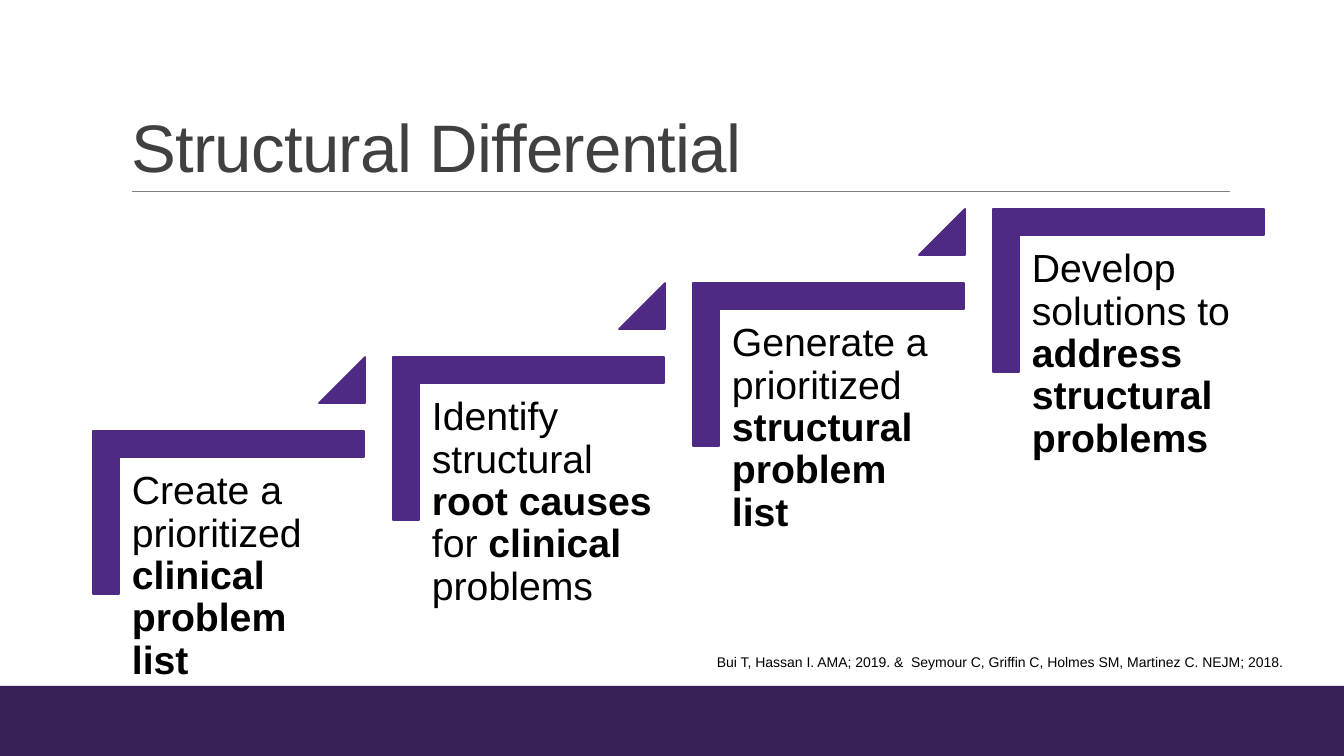
from lxml import etree
from pptx import Presentation
from pptx.dml.color import RGBColor
from pptx.enum.shapes import MSO_CONNECTOR, MSO_SHAPE
from pptx.enum.text import MSO_ANCHOR, MSO_AUTO_SIZE, PP_ALIGN
from pptx.oxml.ns import qn
from pptx.util import Pt

RECTANGLE = MSO_SHAPE.RECTANGLE
CORNER = MSO_SHAPE.CORNER
TRIANGLE = MSO_SHAPE.ISOSCELES_TRIANGLE
STRAIGHT = MSO_CONNECTOR.STRAIGHT
BOTTOM, TOP = MSO_ANCHOR.BOTTOM, MSO_ANCHOR.TOP
LEFT = PP_ALIGN.LEFT
NO_FIT = MSO_AUTO_SIZE.NONE

TITLE = "Structural Differential"
# Each step is a list of (words, bold)
STEPS = [
    [("Create a prioritized ", False), ("clinical problem list", True)],
    [("Identify structural ", False), ("root causes ", True), ("for ", False),
     ("clinical", True), (" problems", False)],
    [("Generate a prioritized ", False), ("structural problem list", True)],
    [("Develop solutions to ", False), ("address structural problems", True)],
]
CITATION = ("Bui T, Hassan I. AMA; 2019. &  Seymour C, Griffin C, "
            "Holmes SM, Martinez C. NEJM; 2018.")

PURPLE, DARK_PURPLE = "4E2A84", "372058"
BLACK, TITLE_GREY, RULE_GREY = "000000", "404040", "808080"
FONT = "Arial"

SLIDE_W, SLIDE_H = 1344, 756
EMU_PER_PX = 12192000 / SLIDE_W
STEP_RIGHT, STEP_UP = 300, 74
BRACKET_BOX = (147, 377, 163, 271)  # before the quarter turn
WORDS_BOX = (120, 459, 245, 215)
ARROW_BOX = (319, 357, 46, 46)
WORDS_INSET = 12


def px(length):
    return round(length * EMU_PER_PX)


def emu_box(box):
    return [px(length) for length in box]


def color(value):
    return RGBColor.from_string(value)


def set_attributes(target, values):
    for name, value in values.items():
        setattr(target, name, value)


def add_solid(slide, kind, box, fill, outline=None, adjustments=()):
    solid = slide.shapes.add_shape(kind, *emu_box(box))
    solid.shadow.inherit = False
    solid.fill.solid()
    solid.fill.fore_color.rgb = color(fill)
    if outline:
        solid.line.color.rgb = color(outline)
        solid.line.width = Pt(1.25)
    else:
        solid.line.fill.background()
    for index, value in enumerate(adjustments):
        solid.adjustments[index] = value
    return solid


def write_runs(paragraph, parts, size, text_color):
    """Write (words, bold) parts into one paragraph and return its runs."""
    paragraph.alignment = LEFT
    for words, bold in parts:
        run = paragraph.add_run()
        run.text = words
        set_attributes(run.font, {"name": FONT, "size": Pt(size), "bold": bold})
        run.font.color.rgb = color(text_color)
    return paragraph.runs


def add_title(slide):
    title = slide.shapes.title
    set_attributes(title, dict(zip(("left", "top", "width", "height"),
                                   emu_box((121, 31, 1109, 160)))))
    set_attributes(title.text_frame, {"vertical_anchor": BOTTOM,
                                      "word_wrap": True, "auto_size": NO_FIT})
    heading = title.text_frame.paragraphs[0]
    heading.line_spacing = 0.85
    for run in write_runs(heading, [(TITLE, False)], 48, TITLE_GREY):
        run.font._element.set("spc", "-50")


def add_title_rule(slide):
    rule = slide.shapes.add_connector(STRAIGHT, *emu_box((132, 191, 1230, 191)))
    rule.line.color.rgb = color(RULE_GREY)
    rule.line.width = Pt(0.5)
    etree.SubElement(rule._element.spPr, qn("a:effectLst"))


def add_step(slide, number, parts):
    """Add one stair: bracket, words and the arrow towards the next stair."""
    def moved(box):
        left, top, width, height = box
        return (left + number * STEP_RIGHT, top - number * STEP_UP, width, height)

    bracket = add_solid(slide, CORNER, moved(BRACKET_BOX), PURPLE, PURPLE,
                        (0.16, 0.16))
    bracket.rotation = 90
    words = slide.shapes.add_textbox(*emu_box(moved(WORDS_BOX))).text_frame
    set_attributes(words, {"word_wrap": True, "vertical_anchor": TOP})
    set_attributes(words, dict.fromkeys(
        ("margin_left", "margin_top", "margin_right", "margin_bottom"),
        px(WORDS_INSET)))
    words.paragraphs[0].line_spacing = 0.9
    write_runs(words.paragraphs[0], parts, 28, BLACK)
    if number < len(STEPS) - 1:
        add_solid(slide, TRIANGLE, moved(ARROW_BOX), PURPLE, PURPLE, (1,))


def add_citation(slide):
    citation = slide.shapes.add_textbox(*emu_box((707, 649, 599, 27))).text_frame
    citation.word_wrap = False
    write_runs(citation.paragraphs[0], [(CITATION, False)], 10, BLACK)


def main():
    deck = Presentation()
    deck.slide_width, deck.slide_height = px(SLIDE_W), px(SLIDE_H)
    slide = deck.slides.add_slide(deck.slide_layouts[5])
    add_solid(slide, RECTANGLE, (0, 686, SLIDE_W, 70), DARK_PURPLE)
    add_title_rule(slide)
    add_title(slide)
    for number, parts in enumerate(STEPS):
        add_step(slide, number, parts)
    add_citation(slide)
    deck.save("out.pptx")


if __name__ == "__main__":
    main()
